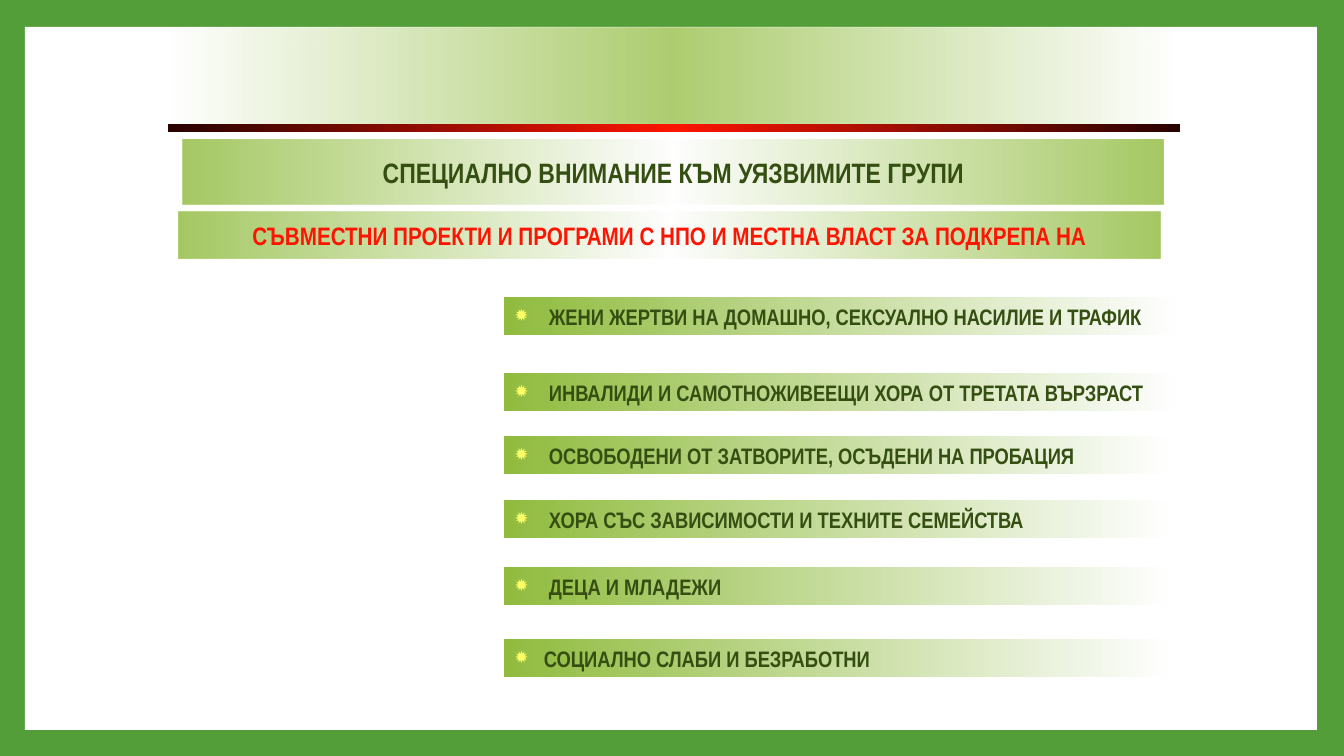
import pptx
import pptx.dml.color
import pptx.enum.shapes
import pptx.enum.text
import pptx.oxml.ns
import pptx.util
from lxml import etree

COLORS = {
    "frame": "549E39",
    "white": "FFFFFF",
    "leaf": "8AB833",
    "dark_green": "354F12",
    "red": "FD1503",
    "maroon": "280300",
    "star": "FFFF66",
}
FONT = "Arial Narrow"
STAR = "✹"

GRADIENTS = {
    "header": [(0, "white", 67), (50, "leaf", 70), (100, "white", 67)],
    "rule": [(0, "maroon", 100), (50, "red", 100), (100, "maroon", 100)],
    "title": [(0, "leaf", 76), (50, "white", 75), (100, "leaf", 76)],
    "group": [(0, "leaf", 94), (100, "white", 95)],
}
BANDS = [
    ("header", (168, 28, 1008, 95)),
    ("rule", (168, 124, 1012, 8)),
]
TITLES = [
    ("СПЕЦИАЛНО ВНИМАНИЕ КЪМ УЯЗВИМИТЕ ГРУПИ", (183, 140, 981, 64), 20, "dark_green"),
    ("СЪВМЕСТНИ ПРОЕКТИ И ПРОГРАМИ С НПО И МЕСТНА ВЛАСТ ЗА ПОДКРЕПА НА",
     (179, 212, 981, 47), 18, "red"),
]
GROUP_LEFT, GROUP_HEIGHT = 505, 37
GROUPS = [
    ("ЖЕНИ ЖЕРТВИ НА ДОМАШНО, СЕКСУАЛНО НАСИЛИЕ И ТРАФИК", 298, 670, 34),
    ("ИНВАЛИДИ И САМОТНОЖИВЕЕЩИ ХОРА ОТ ТРЕТАТА ВЪРЗРАСТ", 374, 670, 34),
    ("ОСВОБОДЕНИ ОТ ЗАТВОРИТЕ, ОСЪДЕНИ НА ПРОБАЦИЯ", 437, 662, 34),
    ("ХОРА СЪС ЗАВИСИМОСТИ И ТЕХНИТЕ СЕМЕЙСТВА", 501, 662, 34),
    ("ДЕЦА И МЛАДЕЖИ", 568, 662, 34),
    ("СОЦИАЛНО СЛАБИ И БЕЗРАБОТНИ", 640, 662, 29),
]


def px(length):
    return round(length * 914400 / 100.8)


def color(name):
    return pptx.dml.color.RGBColor.from_string(COLORS[name])


def add_xml(parent, tag, **attributes):
    return etree.SubElement(parent, pptx.oxml.ns.qn(tag), attributes)


def add_box(page, place):
    box = page.shapes.add_shape(
        pptx.enum.shapes.MSO_SHAPE.RECTANGLE, *[px(length) for length in place])
    box.shadow.inherit = False
    box.line.fill.background()
    return box


def add_gradient_box(page, place, gradient):
    box = add_box(page, place)
    box.fill.gradient()
    box.fill.gradient_angle = 0
    stops = box.element.spPr.find(".//" + pptx.oxml.ns.qn("a:gsLst"))
    for stop in list(stops):
        stops.remove(stop)
    for position, name, opacity in GRADIENTS[gradient]:
        stop = add_xml(stops, "a:gs", pos=str(position * 1000))
        shade = add_xml(stop, "a:srgbClr", val=COLORS[name])
        if opacity < 100:
            add_xml(shade, "a:alpha", val=str(opacity * 1000))
    return box


def write(box, text, size, name, alignment, anchor, wrap):
    frame = box.text_frame
    frame.word_wrap = wrap
    frame.vertical_anchor = anchor
    para = frame.paragraphs[0]
    para.text = text
    para.alignment = alignment
    para.font.name = FONT
    para.font.size = pptx.util.Pt(size)
    para.font.bold = True
    para.font.color.rgb = color(name)
    return para


def add_bullet(para, indent):
    properties = para._p.get_or_add_pPr()
    properties.set("marL", str(px(indent)))
    properties.set("indent", str(-px(indent)))
    bullet_color = etree.Element(pptx.oxml.ns.qn("a:buClr"))
    add_xml(bullet_color, "a:srgbClr", val=COLORS["star"])
    bullet = etree.Element(pptx.oxml.ns.qn("a:buChar"), char=STAR)
    properties.insert(0, bullet_color)
    properties.insert(1, bullet)


def main():
    align = pptx.enum.text.PP_ALIGN
    anchor = pptx.enum.text.MSO_ANCHOR
    deck = pptx.Presentation()
    deck.slide_width, deck.slide_height = px(1344), px(756)
    page = deck.slides.add_slide(deck.slide_layouts[6])
    page.background.fill.solid()
    page.background.fill.fore_color.rgb = color("frame")

    panel = add_box(page, (25, 27, 1292, 703))
    panel.fill.solid()
    panel.fill.fore_color.rgb = color("white")

    for gradient, place in BANDS:
        add_gradient_box(page, place, gradient)

    for text, place, size, name in TITLES:
        box = add_gradient_box(page, place, "title")
        write(box, text, size, name, align.CENTER, anchor.MIDDLE, False)

    for text, top, width, indent in GROUPS:
        box = add_gradient_box(page, (GROUP_LEFT, top, width, GROUP_HEIGHT), "group")
        para = write(box, text, 16, "dark_green", align.LEFT, anchor.TOP, True)
        box.text_frame.auto_size = pptx.enum.text.MSO_AUTO_SIZE.SHAPE_TO_FIT_TEXT
        add_bullet(para, indent)

    deck.save("out.pptx")


if __name__ == "__main__":
    main()
